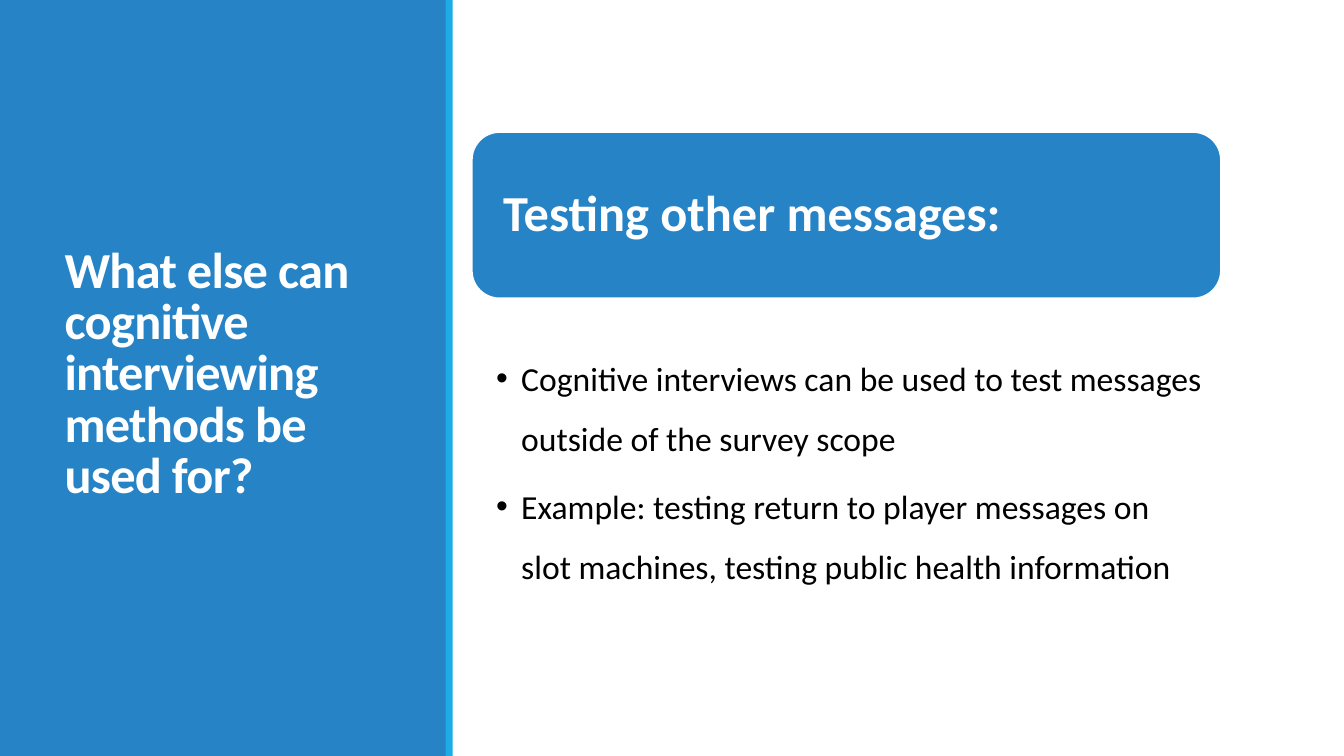
from lxml import etree
from pptx import Presentation, util as u
from pptx.dml.color import RGBColor
from pptx.enum import shapes, text
from pptx.oxml.ns import qn

PX = 9144  # 100 px to the inch
FONT = "Calibri"
COLORS = {"panel": "2683C6", "accent": "1CADE4", "light": "FFFFFF", "body": "000000"}


def px(length):
    return u.Emu(length * PX)


def place(shape, box):
    shape.left, shape.top, shape.width, shape.height = map(px, box)


def add_block(slide, kind, box, color, outline=None):
    shape = slide.shapes.add_shape(kind, *map(px, box))
    shape.shadow.inherit = False
    shape.fill.solid()
    shape.fill.fore_color.rgb = RGBColor.from_string(COLORS[color])
    if outline:
        shape.line.color.rgb = RGBColor.from_string(COLORS[outline])
        shape.line.width = u.Pt(1.25)
    else:
        shape.line.fill.background()
    return shape


def format_frame(frame, anchor, insets):
    frame.word_wrap = True
    frame.auto_size = text.MSO_AUTO_SIZE.NONE
    frame.vertical_anchor = anchor
    (frame.margin_left, frame.margin_top,
     frame.margin_right, frame.margin_bottom) = map(px, insets)


def write(paragraph, wording, size, color, spacing, bold=False):
    paragraph.alignment = text.PP_ALIGN.LEFT
    paragraph.line_spacing = spacing
    run = paragraph.add_run()
    run.text = wording
    run.font.name = FONT
    run.font.size = u.Pt(size)
    run.font.bold = bold
    run.font.color.rgb = RGBColor.from_string(COLORS[color])
    return run


def add_bullet(paragraph, indent):
    properties = paragraph._p.get_or_add_pPr()
    properties.set("marL", str(px(indent)))
    properties.set("indent", str(-px(indent)))
    etree.SubElement(properties, qn("a:buFont")).set("typeface", "Arial")
    etree.SubElement(properties, qn("a:buChar")).set("char", "•")


def title_panel(slide, box, wording):
    left, top, width, height = box
    stripe = 7
    rectangle = shapes.MSO_SHAPE.RECTANGLE
    add_block(slide, rectangle, box, "panel")
    add_block(slide, rectangle, (left + width - 1, top, stripe, height), "accent")

    # Title, brought in front of the panel
    title = slide.shapes.title
    title.element.getparent().append(title.element)
    place(title, (left + 54, top + 57, 337, 631))
    format_frame(title.text_frame, text.MSO_ANCHOR.MIDDLE, (10, 5, 10, 5))
    run = write(title.text_frame.paragraphs[0], wording, 36, "light", 0.85, bold=True)
    run.font._element.set("spc", "-50")


def message_section(slide, box, heading, points):
    left, top, width, height = box
    heading_height, body_offset = 165, 201

    # Heading banner
    banner = add_block(slide, shapes.MSO_SHAPE.ROUNDED_RECTANGLE,
                       (left, top, width, heading_height), "panel", "light")
    format_frame(banner.text_frame, text.MSO_ANCHOR.MIDDLE, (23, 23, 23, 23))
    write(banner.text_frame.paragraphs[0], heading, 36, "light", 0.9, bold=True)

    # Bulleted points
    body = slide.shapes.add_textbox(
        *map(px, (left, top + body_offset, width, height - body_offset)))
    frame = body.text_frame
    format_frame(frame, text.MSO_ANCHOR.TOP, (24, 3, 19, 3))
    for index, point in enumerate(points):
        paragraph = frame.add_paragraph() if index else frame.paragraphs[0]
        write(paragraph, point, 24, "body", 1.5)
        paragraph.space_after = u.Pt(5)
        add_bullet(paragraph, 25)


def main():
    presentation = Presentation()
    presentation.slide_width, presentation.slide_height = px(1333), px(750)
    slide = presentation.slides.add_slide(presentation.slide_layouts[5])
    title_panel(slide, (0, 0, 443, 750),
                "What else can cognitive interviewing methods be used for?")
    message_section(slide, (468, 131, 743, 459), "Testing other messages:", [
        "Cognitive interviews can be used to test messages outside of the survey scope",
        "Example: testing return to player messages on slot machines, "
        "testing public health information",
    ])
    presentation.save("out.pptx")


if __name__ == "__main__":
    main()
